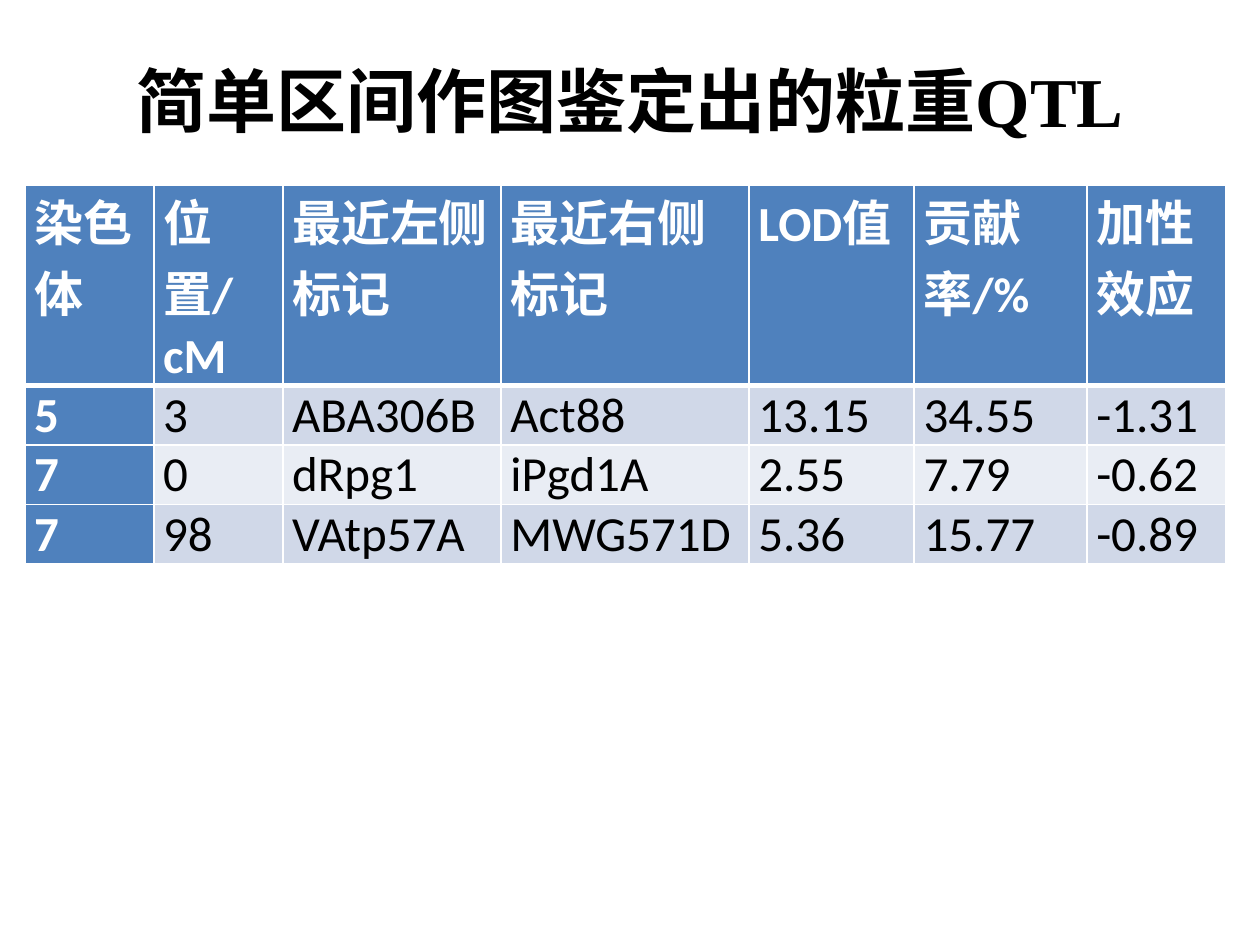
from lxml import etree
from pptx import Presentation
from pptx import util as u
from pptx.dml import color
from pptx.enum import lang, text
from pptx.oxml import ns

BLUE, WHITE, BLACK = "4F81BD", "FFFFFF", "000000"
BANDS = ["D0D8E8", "E9EDF4"]


def write(frame, words, hex_color, **formats):
    paragraph = frame.paragraphs[0]
    run = paragraph.add_run()
    run.text = words
    formats["language_id"] = lang.MSO_LANGUAGE_ID.SIMPLIFIED_CHINESE
    for name, value in formats.items():
        setattr(run.font, name, value)
    run.font.color.rgb = color.RGBColor.from_string(hex_color)
    return paragraph


def add_borders(cell, widths):
    properties = cell._tc.get_or_add_tcPr()
    for index, (side, points) in enumerate(widths.items()):
        line = etree.Element(ns.qn(f"a:ln{side}"), w=str(u.Pt(points)))
        fill = etree.SubElement(line, ns.qn("a:solidFill"))
        etree.SubElement(fill, ns.qn("a:srgbClr"), val=WHITE)
        properties.insert(index, line)


presentation = Presentation()
presentation.slide_width = u.Cm(25.4)
presentation.slide_height = u.Cm(19.05)
slide = presentation.slides.add_slide(presentation.slide_layouts[6])

# Title
title = slide.shapes.add_textbox(u.Cm(1.27), u.Cm(0.91), u.Cm(22.86), u.Cm(2.21))
frame = title.text_frame
frame.word_wrap = True
frame.vertical_anchor = text.MSO_ANCHOR.MIDDLE
paragraph = write(frame, "简单区间作图鉴定出的粒重QTL", BLACK,
                  size=u.Pt(40), name="Times New Roman", bold=True)
paragraph.alignment = text.PP_ALIGN.CENTER

# Table
rows = [
    ["染色体", "位置/cM", "最近左侧标记", "最近右侧标记", "LOD值", "贡献率/%", "加性效应"],
    ["5", "3", "ABA306B", "Act88", "13.15", "34.55", "-1.31"],
    ["7", "0", "dRpg1", "iPgd1A", "2.55", "7.79", "-0.62"],
    ["7", "98", "VAtp57A", "MWG571D", "5.36", "15.77", "-0.89"],
]
widths = [2.6, 2.6, 4.4, 5, 3.33, 3.48, 2.79]
heights = [4.04] + [1.2] * 3
table = slide.shapes.add_table(
    len(rows), len(widths), u.Cm(0.5), u.Cm(3.73),
    u.Cm(sum(widths)), u.Cm(sum(heights))).table
table.first_col = True
for column, width in zip(table.columns, widths):
    column.width = u.Cm(width)
for row, height in zip(table.rows, heights):
    row.height = u.Cm(height)

# Cells: header row and first column are white on blue
margins = {"margin_left": u.Cm(0.19), "margin_right": u.Cm(0.19),
           "margin_top": 0, "margin_bottom": 0}
for r, values in enumerate(rows):
    for c, value in enumerate(values):
        cell = table.cell(r, c)
        heading = r == 0 or c == 0
        for name, margin in margins.items():
            setattr(cell, name, margin)
        cell.fill.solid()
        cell.fill.fore_color.rgb = color.RGBColor.from_string(
            BLUE if heading else BANDS[(r - 1) % 2])
        add_borders(cell, {"L": 1, "R": 1, "T": 3 if r == 1 else 1,
                           "B": 3 if r == 0 else 1})
        write(cell.text_frame, value, WHITE if heading else BLACK,
              size=u.Pt(28), name="Calibri", bold=heading)

presentation.save("out.pptx")
